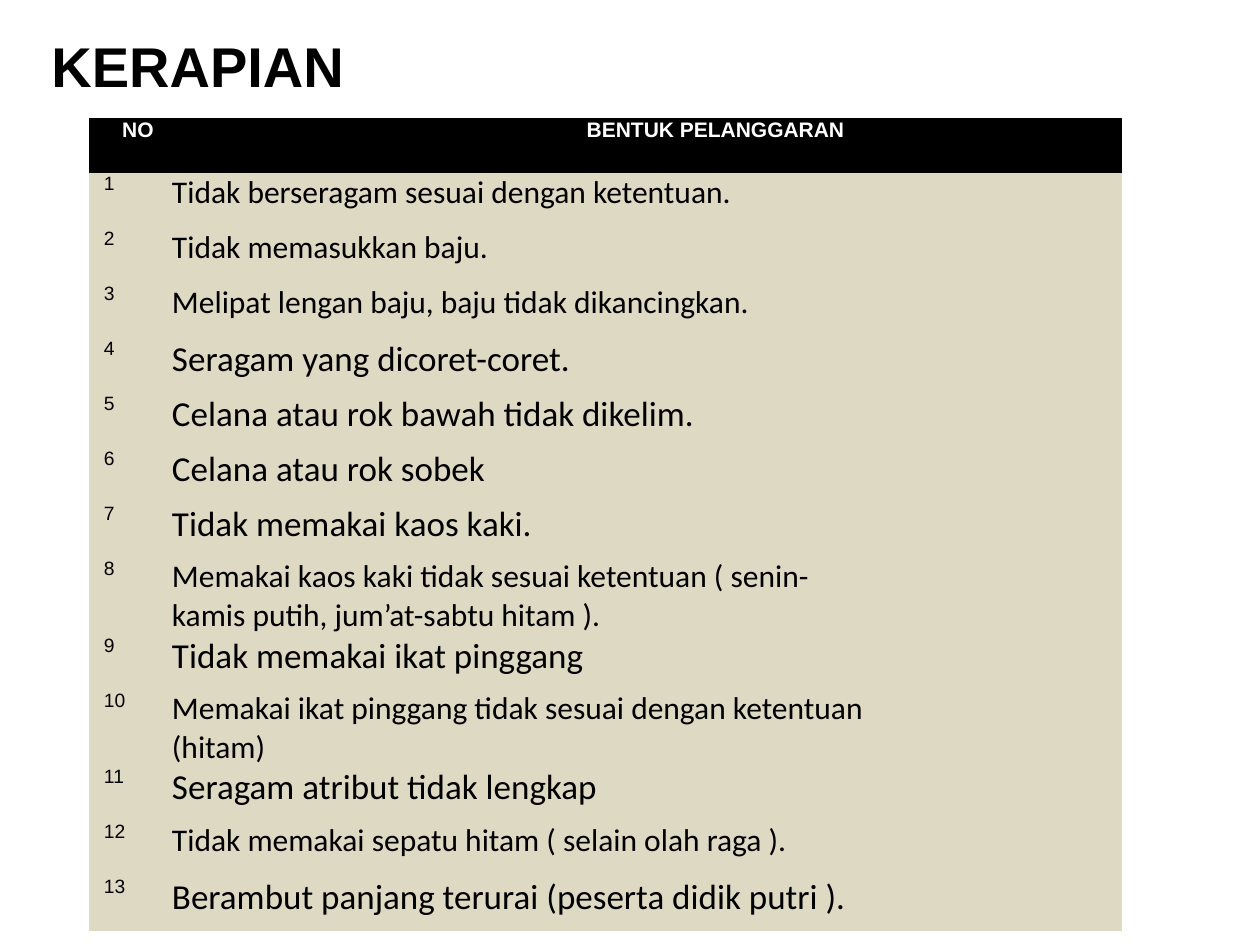
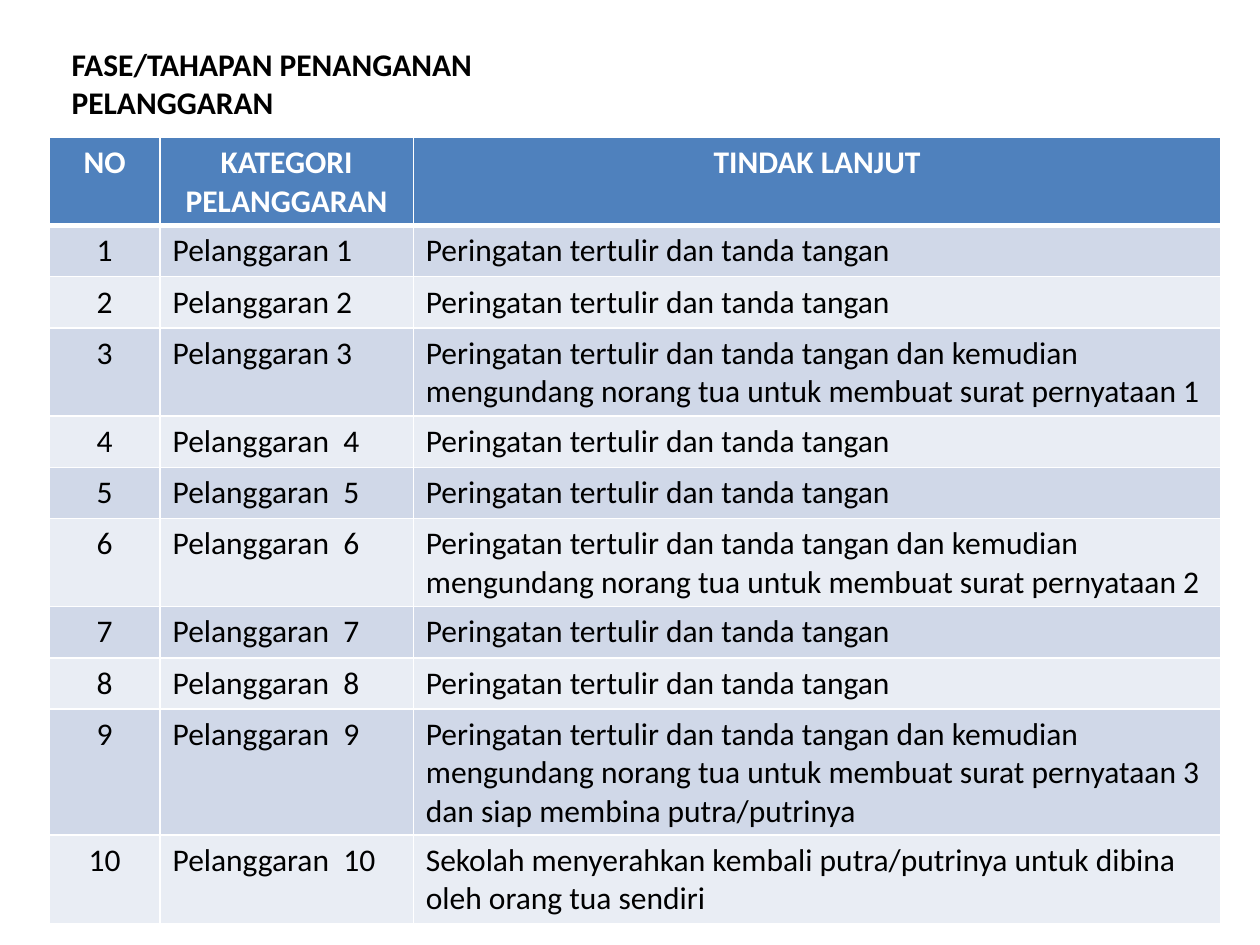
from dataclasses import dataclass

from lxml import etree
from pptx import Presentation, util as u
from pptx.dml.color import RGBColor
from pptx.enum import text
from pptx.oxml.ns import qn

NO_STYLE = "{2D5ABB26-0587-4C30-8999-92F81FD0307C}"


@dataclass(frozen=True)
class Theme:
    """Colours, fonts and type sizes of the deck."""
    ink: str = "000000"
    paper: str = "FFFFFF"
    sand: str = "DDD9C3"
    blue: str = "4F81BD"
    bands: tuple = ("D0D8E8", "E9EDF4")
    head_font: str = "Arial"
    body_font: str = "Calibri"
    headline: int = 32
    large: int = 20
    body: int = 18
    label: int = 12
    number: int = 11
    gap: float = 8.9
    rule: int = 1
    head_rule: int = 3


@dataclass(frozen=True)
class Style:
    """Look of the text in one kind of cell or box."""
    size: float
    font: str
    color: str
    bold: bool = False
    center: bool = False
    indent: float = 0
    before: float = 0


class Deck:
    """Draws on the current slide, in units of a 100 by 75 grid."""

    def __init__(self, theme):
        self.theme = theme
        self.prs = Presentation()
        self.prs.slide_width, self.prs.slide_height = u.Inches(10), u.Inches(7.5)
        self.s = None

    def x(self, cols):
        """Turn grid columns into a length."""
        return round(self.prs.slide_width * cols / 100)

    def y(self, rows):
        """Turn grid rows into a length."""
        return round(self.prs.slide_height * rows / 75)

    def slide(self):
        """Start a blank slide."""
        self.s = self.prs.slides.add_slide(self.prs.slide_layouts[6])

    def paragraphs(self, tf, lines, style):
        """Fill a text frame with one paragraph for each line."""
        for i, line in enumerate(lines):
            p = tf.add_paragraph() if i else tf.paragraphs[0]
            p.alignment = text.PP_ALIGN.CENTER if style.center else text.PP_ALIGN.LEFT
            if style.before:
                p.space_before = u.Pt(style.before)
            if style.indent:
                p._p.get_or_add_pPr().set("marL", str(self.x(style.indent)))
            r = p.add_run()
            r.text = line
            r.font.size, r.font.name, r.font.bold = u.Pt(style.size), style.font, style.bold
            r.font.color.rgb = RGBColor.from_string(style.color)

    def title(self, line, left, top, width, height, style, anchor):
        """Add a heading box."""
        sp = self.s.shapes.add_textbox(self.x(left), self.y(top), self.x(width), self.y(height))
        tf = sp.text_frame
        tf.word_wrap = True
        tf.auto_size = text.MSO_AUTO_SIZE.SHAPE_TO_FIT_TEXT
        tf.vertical_anchor = anchor
        self.paragraphs(tf, [line], style)

    def table(self, left, top, widths, row_height, n_rows):
        """Add an unstyled table with equal rows."""
        frame = self.s.shapes.add_table(
            n_rows, len(widths), self.x(left), self.y(top),
            self.x(sum(widths)), self.y(row_height * n_rows))
        table = frame.table
        table.first_row = table.horz_banding = False
        table._tbl.tblPr.find(qn("a:tableStyleId")).text = NO_STYLE
        for column, width in zip(table.columns, widths):
            column.width = self.x(width)
        for row in table.rows:
            row.height = self.y(row_height)
        return table

    def cell(self, cell, lines, style, fill, flush=False):
        """Fill one cell, with no margins when flush."""
        if flush:
            cell.margin_left = cell.margin_right = cell.margin_top = cell.margin_bottom = 0
        cell.fill.solid()
        cell.fill.fore_color.rgb = RGBColor.from_string(fill)
        self.paragraphs(cell.text_frame, lines, style)

    def borders(self, cell, top, bottom):
        """Rule the four sides of a cell in the paper colour."""
        pr = cell._tc.get_or_add_tcPr()
        thin = self.theme.rule
        sides = (("L", thin), ("R", thin), ("T", top), ("B", bottom))
        for i, (side, width) in enumerate(sides):
            ln = etree.Element(qn(f"a:ln{side}"), w=str(u.Pt(width)))
            fill = etree.SubElement(ln, qn("a:solidFill"))
            etree.SubElement(fill, qn("a:srgbClr"), val=self.theme.paper)
            pr.insert(i, ln)


def neatness_slide(deck):
    """List the dress-code violations."""
    t = deck.theme
    violations = [
        (t.body, 0, "Tidak berseragam sesuai dengan ketentuan."),
        (t.body, t.gap, "Tidak memasukkan baju."),
        (t.body, t.gap, "Melipat lengan baju, baju tidak dikancingkan."),
        (t.large, t.gap, "Seragam yang dicoret-coret."),
        (t.large, t.gap, "Celana atau rok bawah tidak dikelim."),
        (t.large, t.gap, "Celana atau rok sobek"),
        (t.large, t.gap, "Tidak memakai kaos kaki."),
        (t.body, 0, "Memakai kaos kaki tidak sesuai ketentuan ( senin-",
         "kamis putih, jum’at-sabtu hitam )."),
        (t.large, t.gap, "Tidak memakai ikat pinggang"),
        (t.body, 0, "Memakai ikat pinggang tidak sesuai dengan ketentuan", "(hitam)"),
        (t.large, t.gap, "Seragam atribut tidak lengkap"),
        (t.body, t.gap, "Tidak memakai sepatu hitam ( selain olah raga )."),
        (t.large, t.gap, "Berambut panjang terurai (peserta didik putri )."),
    ]
    deck.slide()
    table = deck.table(7.05, 9.4, (6.6, 75.4), 4.36, len(violations) + 1)
    for col, (label, indent) in enumerate((("NO", 1.2), ("BENTUK PELANGGARAN", 10.9))):
        style = Style(t.label, t.head_font, t.paper, True, True, indent, t.gap)
        deck.cell(table.cell(0, col), [label], style, t.ink, flush=True)
    number = Style(t.number, t.head_font, t.ink, indent=1.2, before=t.gap)
    for row, (size, before, *lines) in enumerate(violations, 1):
        deck.cell(table.cell(row, 0), [str(row)], number, t.sand, flush=True)
        style = Style(size, t.body_font, t.ink, before=before)
        deck.cell(table.cell(row, 1), lines, style, t.sand, flush=True)
    deck.title("KERAPIAN", 3.1, 2, 33.6, 6.4,
               Style(t.headline, t.head_font, t.ink, True), text.MSO_ANCHOR.MIDDLE)


def follow_up_slide(deck):
    """Show the follow-up to each stage of violation."""
    t = deck.theme
    warning = "Peringatan tertulir dan tanda tangan"
    summons = f"{warning} dan kemudian mengundang norang tua untuk membuat surat pernyataan"
    actions = [
        warning, warning, f"{summons} 1",
        warning, warning, f"{summons} 2",
        warning, warning, f"{summons} 3 dan siap membina putra/putrinya",
        "Sekolah menyerahkan kembali putra/putrinya untuk dibina oleh orang tua sendiri",
    ]
    rows = [("NO", "KATEGORI PELANGGARAN", "TINDAK LANJUT")]
    for n, action in enumerate(actions, 1):
        gap = " " if n < 4 else "  "
        rows.append((str(n), f"Pelanggaran{gap}{n}", action))

    deck.slide()
    deck.title("FASE/TAHAPAN PENANGANAN PELANGGARAN", 4.7, 3.1, 50, 7.1,
               Style(t.body, t.body_font, t.ink, True), text.MSO_ANCHOR.TOP)
    table = deck.table(3.9, 10.9, (8.8, 20.1, 64.1), 4.06, len(rows))
    for i, row in enumerate(rows):
        head = i == 0
        fill = t.blue if head else t.bands[(i - 1) % 2]
        for col, label in enumerate(row):
            style = Style(t.body, t.body_font, t.paper if head else t.ink,
                          head, head or col == 0)
            cell = table.cell(i, col)
            deck.cell(cell, [label], style, fill)
            deck.borders(cell, t.head_rule if i == 1 else t.rule,
                         t.head_rule if head else t.rule)


def main():
    """Build and save the deck."""
    deck = Deck(Theme())
    neatness_slide(deck)
    follow_up_slide(deck)
    deck.prs.save("out.pptx")


if __name__ == "__main__":
    main()
